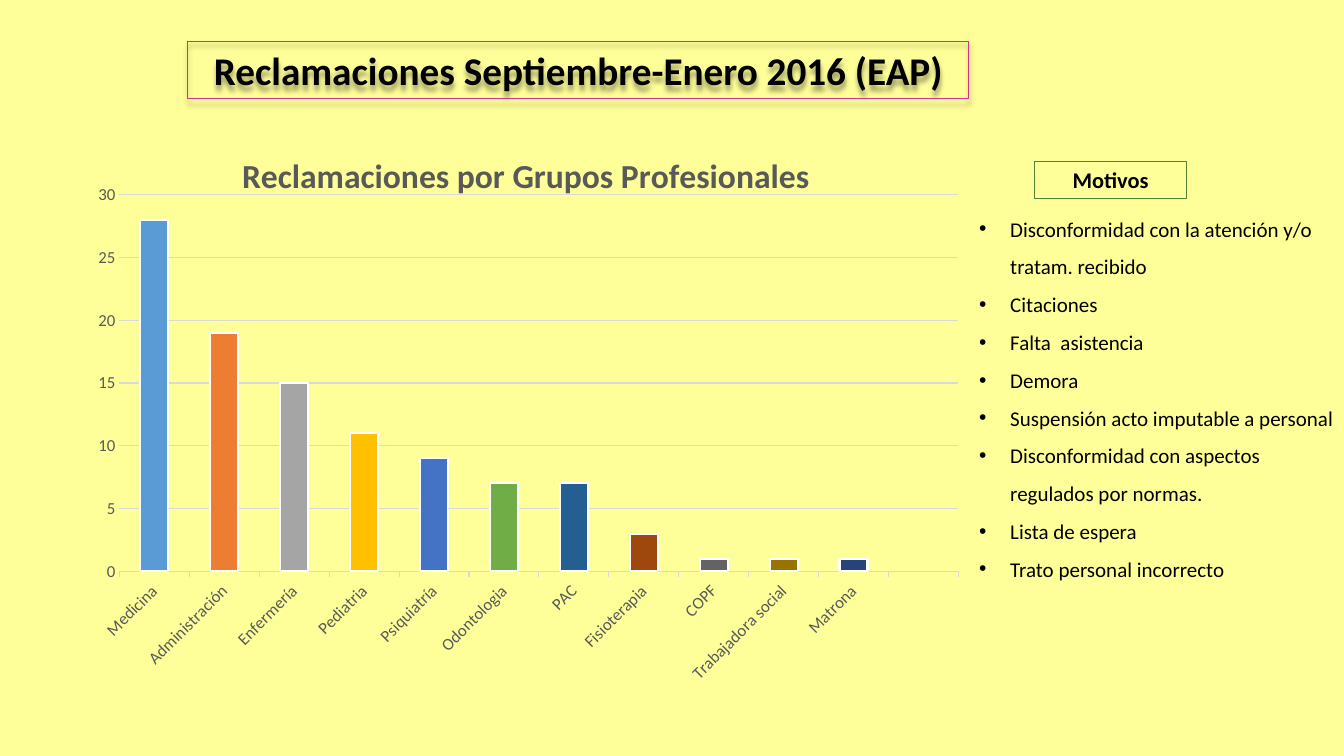
from lxml import etree
from pptx import Presentation
from pptx.chart.data import CategoryChartData
from pptx.dml.color import RGBColor
from pptx.enum.chart import XL_CHART_TYPE, XL_TICK_MARK
from pptx.enum.shapes import MSO_SHAPE
from pptx.enum.text import MSO_ANCHOR, MSO_AUTO_SIZE, PP_ALIGN
from pptx.oxml import parse_xml
from pptx.oxml.ns import nsdecls, qn
from pptx.util import Inches, Pt

FONT = "Calibri"
BLACK = RGBColor(0x00, 0x00, 0x00)
WHITE = RGBColor(0xFF, 0xFF, 0xFF)
YELLOW = RGBColor(0xFF, 0xFF, 0x99)
PINK = RGBColor(0xCC, 0x33, 0x99)
GREEN = RGBColor(0x54, 0x82, 0x35)
GRAY = RGBColor(0x59, 0x59, 0x59)
LIGHT_GRAY = RGBColor(0xD9, 0xD9, 0xD9)

COMPLAINTS = [
    ("Medicina", 28, RGBColor(0x5B, 0x9B, 0xD5)),
    ("Administración", 19, RGBColor(0xED, 0x7D, 0x31)),
    ("Enfermería", 15, RGBColor(0xA5, 0xA5, 0xA5)),
    ("Pediatria", 11, RGBColor(0xFF, 0xC0, 0x00)),
    ("Psiquiatría", 9, RGBColor(0x44, 0x72, 0xC4)),
    ("Odontologia", 7, RGBColor(0x70, 0xAD, 0x47)),
    ("PAC", 7, RGBColor(0x25, 0x5E, 0x91)),
    ("Fisioterapia", 3, RGBColor(0x9E, 0x48, 0x0E)),
    ("COPF", 1, RGBColor(0x63, 0x63, 0x63)),
    ("Trabajadora social", 1, RGBColor(0x99, 0x73, 0x00)),
    ("Matrona", 1, RGBColor(0x26, 0x44, 0x78)),
    ("", None, RGBColor(0x43, 0x68, 0x2B)),
]
REASONS = [
    "Disconformidad con la atención y/o tratam. recibido",
    "Citaciones",
    "Falta  asistencia",
    "Demora",
    "Suspensión acto imputable a personal",
    "Disconformidad con aspectos regulados por normas.",
    "Lista de espera",
    "Trato personal incorrecto",
]


def style_font(font, size, color, bold=False):
    values = {"name": FONT, "size": Pt(size), "bold": bold}
    for name, value in values.items():
        setattr(font, name, value)
    font.color.rgb = color


def set_layout(parent, position, **places):
    """Place a chart part by fractions of the chart area."""
    for old in parent.findall(qn("c:layout")):
        parent.remove(old)
    layout = etree.Element(qn("c:layout"))
    manual = etree.SubElement(layout, qn("c:manualLayout"))
    for tag, value in places.items():
        etree.SubElement(manual, qn("c:" + tag)).set("val", str(value))
    parent.insert(position, layout)


prs = Presentation()
prs.slide_width, prs.slide_height = Inches(13.33), Inches(7.5)
slide = prs.slides.add_slide(prs.slide_layouts[1])
slide.background.fill.solid()
slide.background.fill.fore_color.rgb = YELLOW

# Framed headings
title = slide.shapes.title
reasons_heading = slide.shapes.add_shape(
    MSO_SHAPE.RECTANGLE, Inches(10.26), Inches(1.6), Inches(1.51), Inches(0.37))
reasons_heading.shadow.inherit = False
title.left, title.top = Inches(1.86), Inches(0.41)
title.width, title.height = Inches(7.75), Inches(0.57)
for heading, text, size, border in [
    (title, "Reclamaciones Septiembre-Enero 2016 (EAP)", 28, PINK),
    (reasons_heading, "Motivos", 16, GREEN),
]:
    heading.fill.background()
    heading.line.color.rgb = border
    heading.line.width = Pt(0.75)
    frame = heading.text_frame
    frame.text = text
    frame.word_wrap = True
    frame.auto_size = MSO_AUTO_SIZE.NONE
    frame.vertical_anchor = MSO_ANCHOR.MIDDLE
    frame.paragraphs[0].alignment = PP_ALIGN.CENTER
    style_font(frame.paragraphs[0].runs[0].font, size, BLACK, bold=True)

# Soft shadow under the title
title._element.spPr.append(parse_xml(
    f'<a:effectLst {nsdecls("a")}>'
    '<a:outerShdw blurRad="50800" dist="38100" dir="5400000" algn="t" rotWithShape="0">'
    '<a:srgbClr val="000000"><a:alpha val="40000"/></a:srgbClr>'
    '</a:outerShdw></a:effectLst>'))

# Complaints chart
data = CategoryChartData()
data.categories = [group for group, _, _ in COMPLAINTS]
data.add_series("Series 1", [count for _, count, _ in COMPLAINTS])
chart = slide.shapes.add_chart(
    XL_CHART_TYPE.COLUMN_CLUSTERED,
    Inches(0.74), Inches(1.28), Inches(8.89), Inches(5.93), data).chart
style_font(chart.font, 10, BLACK)
chart.has_legend = False
chart.has_title = True
chart_title = chart.chart_title
chart_title.text_frame.text = "Reclamaciones por Grupos Profesionales"
style_font(chart_title.text_frame.paragraphs[0].runs[0].font, 24, GRAY, bold=True)
set_layout(chart_title._element, 1, xMode="edge", yMode="edge", x=0.18, y=0.03)
set_layout(chart._chartSpace.chart.plotArea, 0, layoutTarget="inner",
           xMode="edge", yMode="edge", x=0.05, y=0.11, w=0.936, h=0.63)

# Columns
plot = chart.plots[0]
plot.gap_width = 150
plot.vary_by_categories = True
for index, (_, _, color) in enumerate(COMPLAINTS):
    column = plot.series[0].points[index].format
    column.fill.solid()
    column.fill.fore_color.rgb = color
    column.line.color.rgb = WHITE
    column.line.width = Pt(1.5)

# Axes
groups_axis, counts_axis = chart.category_axis, chart.value_axis
for axis in (groups_axis, counts_axis):
    style_font(axis.tick_labels.font, 12, GRAY)
groups_axis.major_tick_mark = XL_TICK_MARK.OUTSIDE
groups_axis._element.find(qn("c:txPr")).find(qn("a:bodyPr")).set("rot", "-2700000")
counts_axis.major_tick_mark = XL_TICK_MARK.NONE
counts_axis.minimum_scale, counts_axis.maximum_scale = 0, 30
counts_axis.major_unit = 5
counts_axis.format.line.fill.background()
for line in (groups_axis.format.line, counts_axis.major_gridlines.format.line):
    line.color.rgb = LIGHT_GRAY
    line.width = Pt(0.75)

# List of reasons
reasons = slide.placeholders[1]
reasons.left, reasons.top = Inches(9.61), Inches(1.97)
reasons.width, reasons.height = Inches(3.73), Inches(4.12)
frame = reasons.text_frame
frame.text = "\n".join(REASONS)
frame.word_wrap = True
frame.auto_size = MSO_AUTO_SIZE.NONE
for paragraph in frame.paragraphs:
    paragraph.line_spacing = 1.5
    paragraph.space_before = Pt(0)
    style_font(paragraph.runs[0].font, 15, BLACK)
    properties = paragraph._p.get_or_add_pPr()
    properties.set("marL", str(Inches(0.31)))
    properties.set("indent", str(Inches(-0.31)))
    etree.SubElement(properties, qn("a:buFont")).set("typeface", "Arial")
    etree.SubElement(properties, qn("a:buChar")).set("char", "•")

prs.save("out.pptx")
